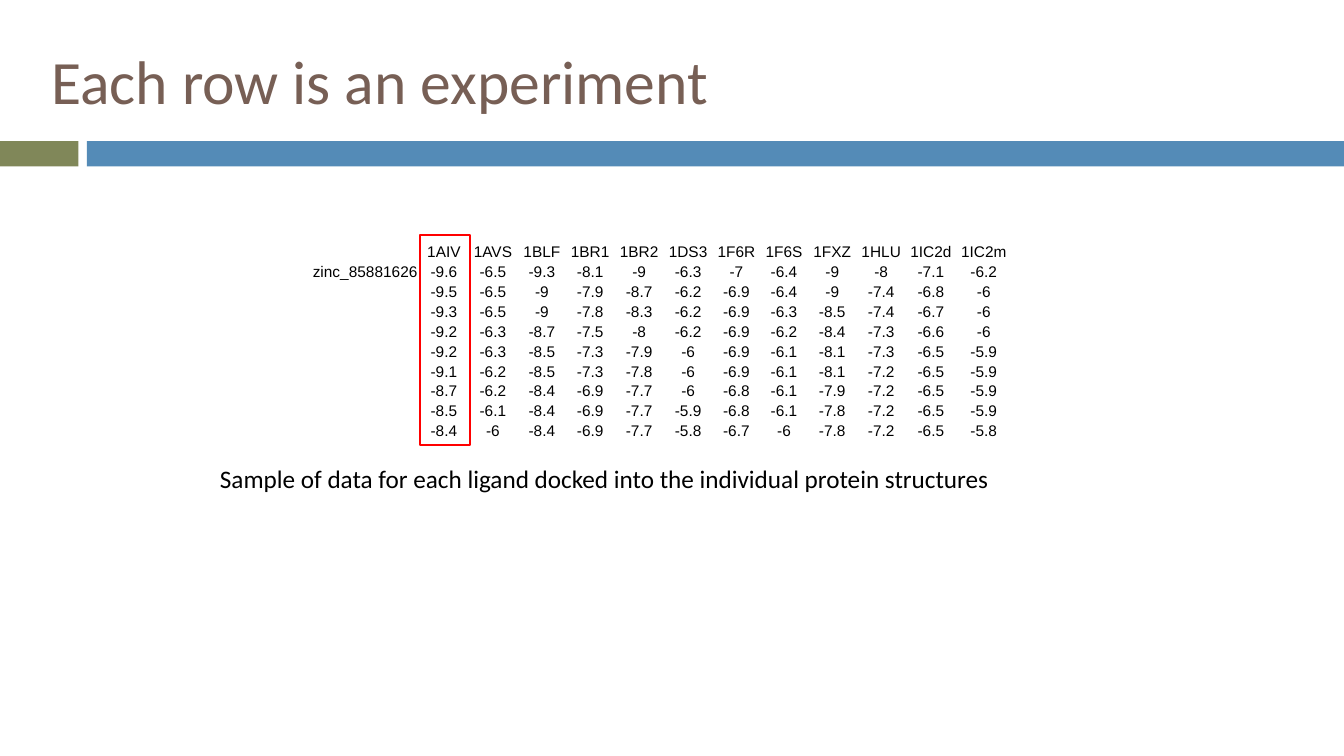
from lxml import etree
from pptx import Presentation
from pptx.dml.color import RGBColor
from pptx.enum.shapes import MSO_SHAPE
from pptx.enum.text import MSO_ANCHOR, PP_ALIGN
from pptx.oxml.ns import qn
from pptx.util import Pt

RECTANGLE = MSO_SHAPE.RECTANGLE
MIDDLE, BOTTOM = MSO_ANCHOR.MIDDLE, MSO_ANCHOR.BOTTOM
LEFT, CENTER = PP_ALIGN.LEFT, PP_ALIGN.CENTER
TITLE_ONLY = 5


def color(value):
    return RGBColor.from_string(value)


def set_font(paragraph, name, size, value):
    paragraph.font.name = name
    paragraph.font.size = Pt(size)
    paragraph.font.color.rgb = color(value)


presentation = Presentation()
presentation.slide_width = Pt(960)
presentation.slide_height = Pt(540)
slide = presentation.slides.add_slide(presentation.slide_layouts[TITLE_ONLY])

# Band under the title
for left, width, fill in ((0, 56, "808759"), (62, 898, "548BB7")):
    band = slide.shapes.add_shape(RECTANGLE, Pt(left), Pt(100.8), Pt(width), Pt(18))
    band.shadow.inherit = False
    band.fill.solid()
    band.fill.fore_color.rgb = color(fill)
    band.line.fill.background()

# Title
title = slide.shapes.title
title.left, title.top, title.width, title.height = Pt(29.5), Pt(18), Pt(856), Pt(78)
title.text_frame.text = "Each row is an experiment"
title.text_frame.vertical_anchor = MIDDLE
title_paragraph = title.text_frame.paragraphs[0]
title_paragraph.alignment = LEFT
set_font(title_paragraph, "Calibri", 44, "775F55")

# Docking scores: one column per protein structure
ligand = "zinc_85881626"
scores = {
    "1AIV": "-9.6 -9.5 -9.3 -9.2 -9.2 -9.1 -8.7 -8.5 -8.4",
    "1AVS": "-6.5 -6.5 -6.5 -6.3 -6.3 -6.2 -6.2 -6.1 -6",
    "1BLF": "-9.3 -9 -9 -8.7 -8.5 -8.5 -8.4 -8.4 -8.4",
    "1BR1": "-8.1 -7.9 -7.8 -7.5 -7.3 -7.3 -6.9 -6.9 -6.9",
    "1BR2": "-9 -8.7 -8.3 -8 -7.9 -7.8 -7.7 -7.7 -7.7",
    "1DS3": "-6.3 -6.2 -6.2 -6.2 -6 -6 -6 -5.9 -5.8",
    "1F6R": "-7 -6.9 -6.9 -6.9 -6.9 -6.9 -6.8 -6.8 -6.7",
    "1F6S": "-6.4 -6.4 -6.3 -6.2 -6.1 -6.1 -6.1 -6.1 -6",
    "1FXZ": "-9 -9 -8.5 -8.4 -8.1 -8.1 -7.9 -7.8 -7.8",
    "1HLU": "-8 -7.4 -7.4 -7.3 -7.3 -7.2 -7.2 -7.2 -7.2",
    "1IC2d": "-7.1 -6.8 -6.7 -6.6 -6.5 -6.5 -6.5 -6.5 -6.5",
    "1IC2m": "-6.2 -6 -6 -6 -5.9 -5.9 -5.9 -5.9 -5.8",
}
columns = [["", ligand] + [""] * 8]
columns += [[protein, *values.split()] for protein, values in scores.items()]
column_widths = [78.5, 34, 36, 34, 35, 35, 35, 34, 34, 35, 35, 36, 39.5]
row_count, row_height = len(columns[0]), 14.22

table = slide.shapes.add_table(
    row_count, len(columns), Pt(221.6), Pt(172.2),
    Pt(sum(column_widths)), Pt(row_count * row_height)).table
table.first_row = False
table.horz_banding = False
for row in table.rows:
    row.height = Pt(row_height)
for column_index, (texts, width) in enumerate(zip(columns, column_widths)):
    table.columns[column_index].width = Pt(width)
    for row_index, text in enumerate(texts):
        cell = table.cell(row_index, column_index)
        cell.fill.background()
        cell.vertical_anchor = BOTTOM
        cell.margin_left = cell.margin_right = cell.margin_top = Pt(0.7)
        cell.margin_bottom = 0
        paragraph = cell.text_frame.paragraphs[0]
        paragraph.alignment = CENTER
        if text:
            paragraph.text = text
        else:
            # Keeps empty cells from stretching their row
            etree.SubElement(paragraph._p, qn("a:endParaRPr"), sz="1100")
        set_font(paragraph, "Arial", 11, "000000")
table.cell(1, 1).fill.solid()
table.cell(1, 1).fill.fore_color.rgb = color("FFFFFF")

# Frame around the first protein
frame = slide.shapes.add_shape(RECTANGLE, Pt(300), Pt(168), Pt(36), Pt(150))
frame.shadow.inherit = False
frame.fill.background()
frame.line.color.rgb = color("FF0000")
frame.line.width = Pt(1.5)

# Caption
caption = slide.shapes.add_textbox(Pt(150), Pt(327.6), Pt(615.6), Pt(29))
caption.text_frame.word_wrap = True
caption.text_frame.text = (
    "Sample of data for each ligand docked into the individual protein structures")
set_font(caption.text_frame.paragraphs[0], "Calibri", 18, "000000")

presentation.save("out.pptx")
